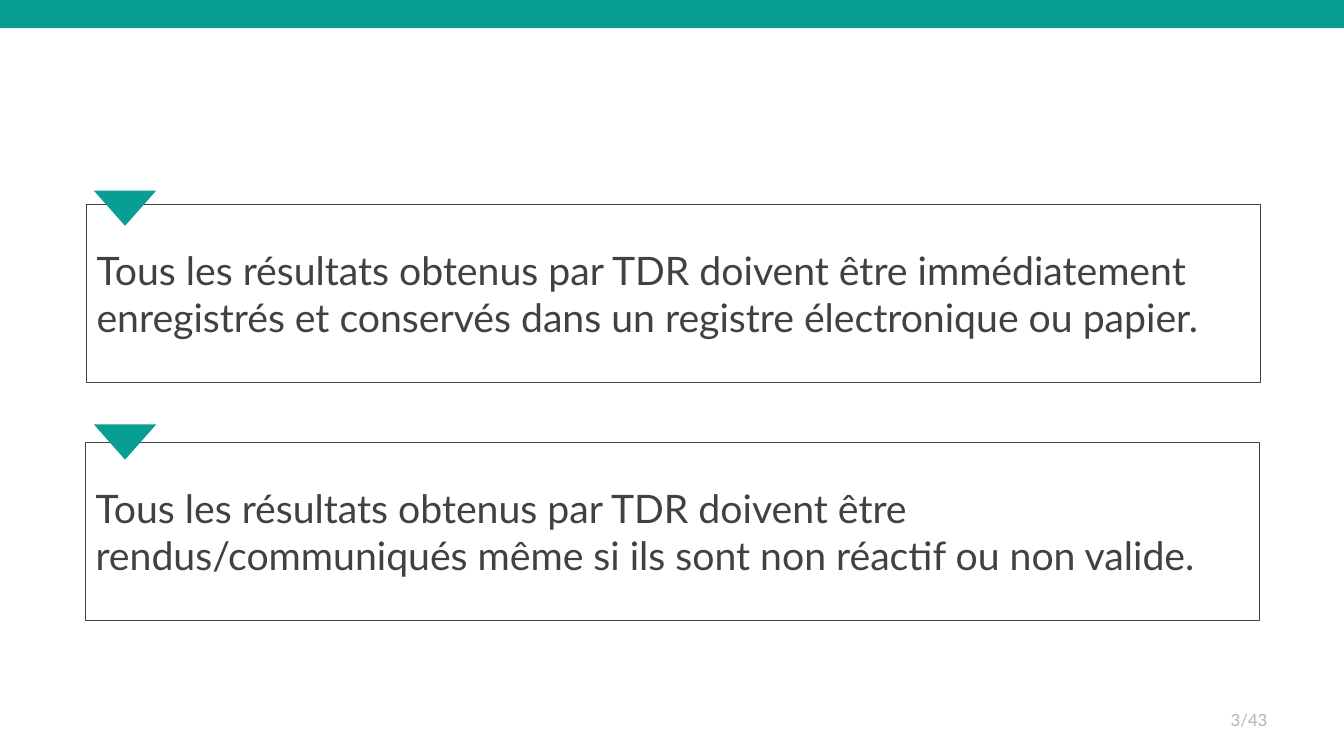
from pptx import Presentation
from pptx.dml.color import RGBColor
from pptx.enum.shapes import MSO_SHAPE
from pptx.enum.text import MSO_ANCHOR, PP_ALIGN
from pptx.util import Inches, Pt

COLORS = {"teal": "099E93", "dark": "414141", "gray": "B3B3B3"}
WIDE, HIGH = 11.64, 1.77
# left, top, mark top, text
NOTES = [
    (0.86, 2.03, 1.89, "Tous les résultats obtenus par TDR doivent être immédiatement "
     "enregistrés et conservés dans un registre électronique ou papier."),
    (0.85, 4.39, 4.21, "Tous les résultats obtenus par TDR doivent être "
     "rendus/communiqués même si ils sont non réactif ou non valide."),
]


def color(name):
    return RGBColor.from_string(COLORS[name])


def add_form(slide, kind, box, fill=None, line=None):
    form = slide.shapes.add_shape(kind, *map(Inches, box))
    form.shadow.inherit = False
    if fill:
        form.fill.solid()
        form.fill.fore_color.rgb = color(fill)
    else:
        form.fill.background()
    if line:
        form.line.color.rgb = color(line)
        form.line.width = Pt(0.75)
    else:
        form.line.fill.background()
    return form


def set_text(form, text, size, tone, align):
    frame = form.text_frame
    frame.text = text
    frame.word_wrap = True
    frame.vertical_anchor = MSO_ANCHOR.MIDDLE
    par = frame.paragraphs[0]
    par.alignment = align
    font = par.runs[0].font
    font.name, font.size = "Lato", Pt(size)
    font.color.rgb = color(tone)
    return par


def add_note(slide, box, text):
    form = add_form(slide, MSO_SHAPE.RECTANGLE, box, line="dark")
    par = set_text(form, text, 28, "dark", PP_ALIGN.LEFT)
    par.space_after = Pt(6)


def add_mark(slide, box):
    mark = add_form(slide, MSO_SHAPE.ISOSCELES_TRIANGLE, box, fill="teal")
    mark.rotation = 180


def add_page(slide, box, text):
    form = slide.shapes.add_textbox(*map(Inches, box))
    par = set_text(form, text, 12, "gray", PP_ALIGN.RIGHT)
    par.line_spacing = 0.9


def main():
    deck = Presentation()
    deck.slide_width, deck.slide_height = Inches(13.33), Inches(7.5)
    slide = deck.slides.add_slide(deck.slide_layouts[6])

    # Top band
    add_form(slide, MSO_SHAPE.RECTANGLE, (-0.08, -0.09, 13.5, 0.37), fill="teal")

    # Framed notes with their marks
    for left, top, peak, text in NOTES:
        add_note(slide, (left, top, WIDE, HIGH), text)
        add_mark(slide, (0.93, peak, 0.62, 0.35))

    # Page number
    add_page(slide, (9.67, 6.95, 3, 0.4), "3/43")
    deck.save("out.pptx")


if __name__ == "__main__":
    main()
